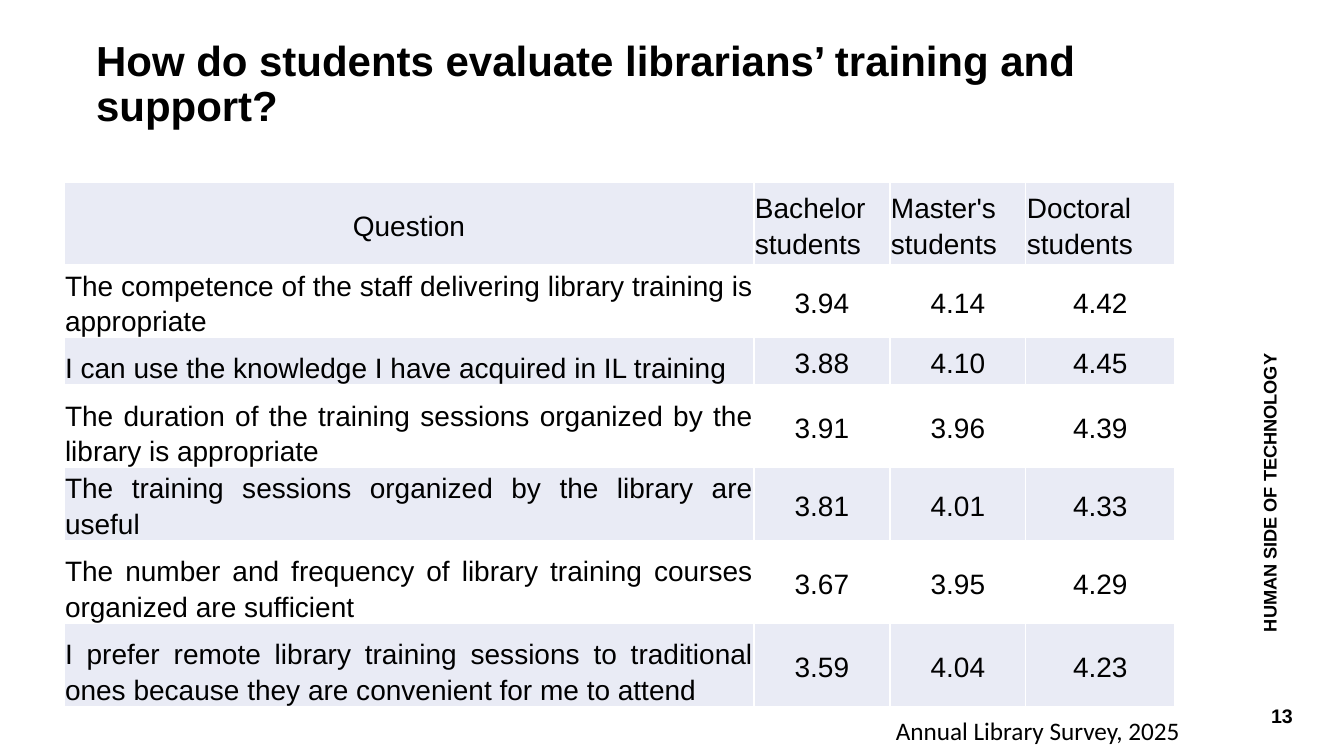
from lxml.etree import SubElement
from pptx import Presentation
from pptx.dml.color import RGBColor
from pptx.enum.text import MSO_ANCHOR as Anchor, PP_ALIGN as Align
from pptx.oxml.ns import qn
from pptx.util import Pt

PX = 914400 / 100.8
BLACK = RGBColor(0x00, 0x00, 0x00)
WHITE = RGBColor(0xFF, 0xFF, 0xFF)
BAND = RGBColor(0xE9, 0xEB, 0xF5)

COLUMN_WIDTHS = [690, 136, 136, 149]
ROW_HEIGHTS = [83, 54, 47, 83, 53, 83, 83]
SURVEY = [
    ("Question", "Bachelor students", "Master's students", "Doctoral students"),
    ("The competence of the staff delivering library training is appropriate",
     "3.94", "4.14", "4.42"),
    ("I can use the knowledge I have acquired in IL training",
     "3.88", "4.10", "4.45"),
    ("The duration of the training sessions organized by the library is appropriate",
     "3.91", "3.96", "4.39"),
    ("The training sessions organized by the library are useful",
     "3.81", "4.01", "4.33"),
    ("The number and frequency of library training courses organized are sufficient",
     "3.67", "3.95", "4.29"),
    ("I prefer remote library training sessions to traditional ones because they "
     "are convenient for me to attend", "3.59", "4.04", "4.23"),
]


def px(count):
    return round(count * PX)


def write(frame, text, size, font="Arial", bold=False, align=Align.LEFT,
          anchor=Anchor.TOP, spacing=1.0):
    """Put one formatted run in a text frame or table cell."""
    frame.word_wrap = True
    frame.vertical_anchor = anchor
    para = frame.paragraphs[0]
    para.alignment = align
    para.line_spacing = spacing
    para.space_before = Pt(0)
    span = para.add_run()
    span.text = text
    span.font.name = font
    span.font.size = Pt(size)
    span.font.bold = bold
    span.font.color.rgb = BLACK
    return para


deck = Presentation()
deck.slide_width, deck.slide_height = px(1344), px(756)
page = deck.slides.add_slide(deck.slide_layouts[5])
page.background.fill.solid()
page.background.fill.fore_color.rgb = WHITE

title = page.shapes.title
title.left, title.top, title.width, title.height = px(86), px(35), px(1067), px(101)
write(title.text_frame, "How do students evaluate librarians’ training and support?",
      30, bold=True, spacing=0.9)

# Survey table
table_frame = page.shapes.add_table(len(SURVEY), len(COLUMN_WIDTHS), px(64), px(182),
                                    px(sum(COLUMN_WIDTHS)), px(sum(ROW_HEIGHTS)))
table = table_frame.table
for column, width in zip(table.columns, COLUMN_WIDTHS):
    column.width = px(width)
for row, height in zip(table.rows, ROW_HEIGHTS):
    row.height = px(height)

for row_index, texts in enumerate(SURVEY):
    for column_index, text in enumerate(texts):
        cell = table.cell(row_index, column_index)
        cell.margin_left = cell.margin_right = cell.margin_top = px(1)
        cell.margin_bottom = 0
        is_header, is_question = row_index == 0, column_index == 0
        para = write(cell.text_frame, text, 20, spacing=1.15,
                     align=Align.CENTER if is_header == is_question else Align.JUSTIFY)
        if not is_header and not is_question:
            para.alignment = Align.CENTER
        para.space_after = Pt(10)
        cell.vertical_anchor = (Anchor.BOTTOM if is_question and not is_header
                                else Anchor.MIDDLE)

        properties = cell._tc.get_or_add_tcPr()
        for side in ("a:lnL", "a:lnR", "a:lnT", "a:lnB"):
            border = SubElement(properties, qn(side), w=str(Pt(1)))
            paint = SubElement(border, qn("a:solidFill"))
            SubElement(paint, qn("a:srgbClr"), val=str(WHITE))
        if row_index % 2 == 0:
            cell.fill.solid()
            cell.fill.fore_color.rgb = BAND
        else:
            cell.fill.background()

# Section name along the right edge
section = page.shapes.add_textbox(px(1037), px(335), px(485), px(129))
section.rotation = 270
section.text_frame.margin_bottom = px(32)
write(section.text_frame, "HUMAN SIDE OF TECHNOLOGY", 13, bold=True,
      anchor=Anchor.MIDDLE, spacing=1.3)

source_note = page.shapes.add_textbox(px(886), px(710), px(312), px(40))
write(source_note.text_frame, "Annual Library Survey, 2025", 18, font="Calibri")

page_number = page.shapes.add_textbox(px(1231), px(692), px(102), px(40))
write(page_number.text_frame, "13", 14, bold=True, align=Align.CENTER,
      anchor=Anchor.BOTTOM)

deck.save("out.pptx")
